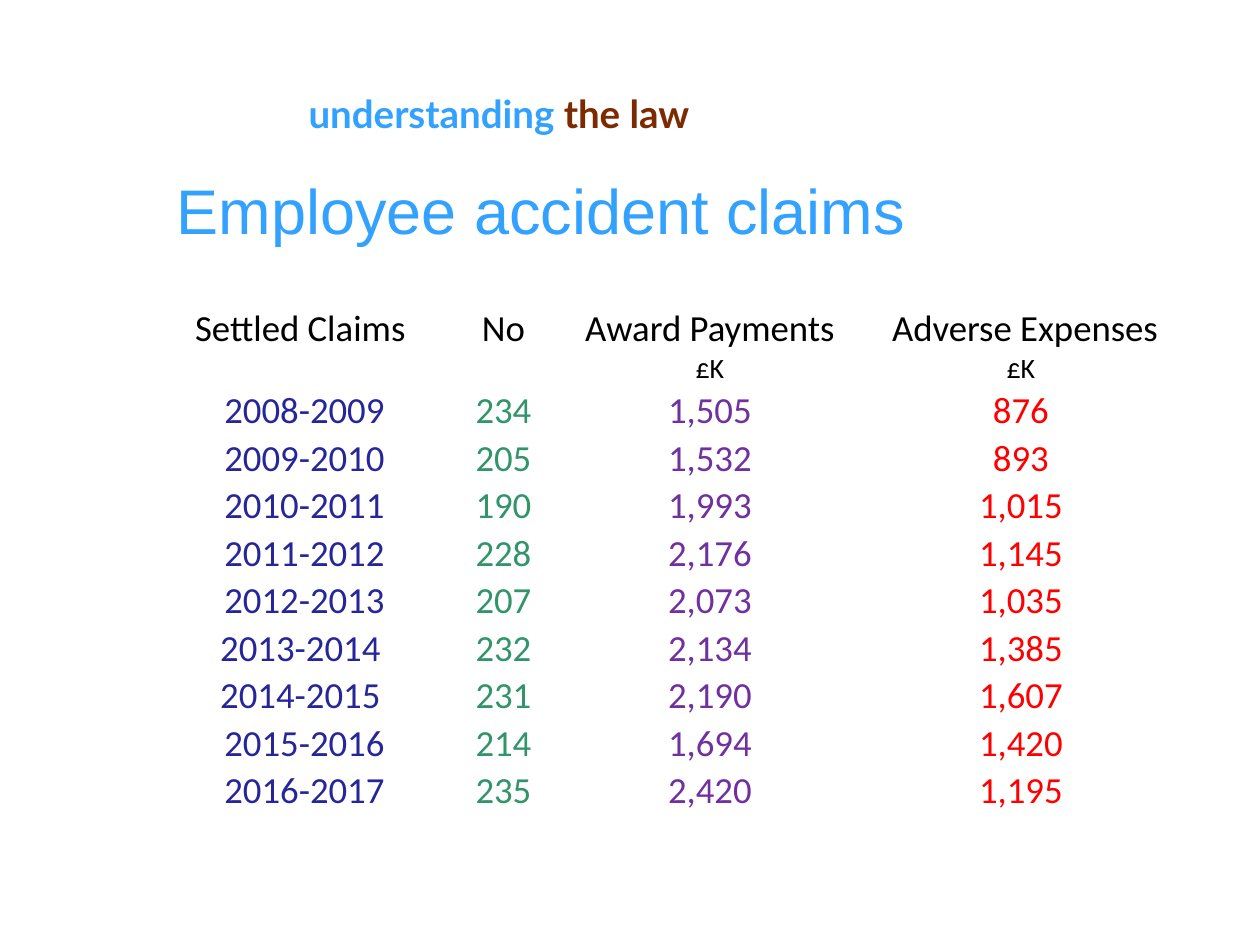
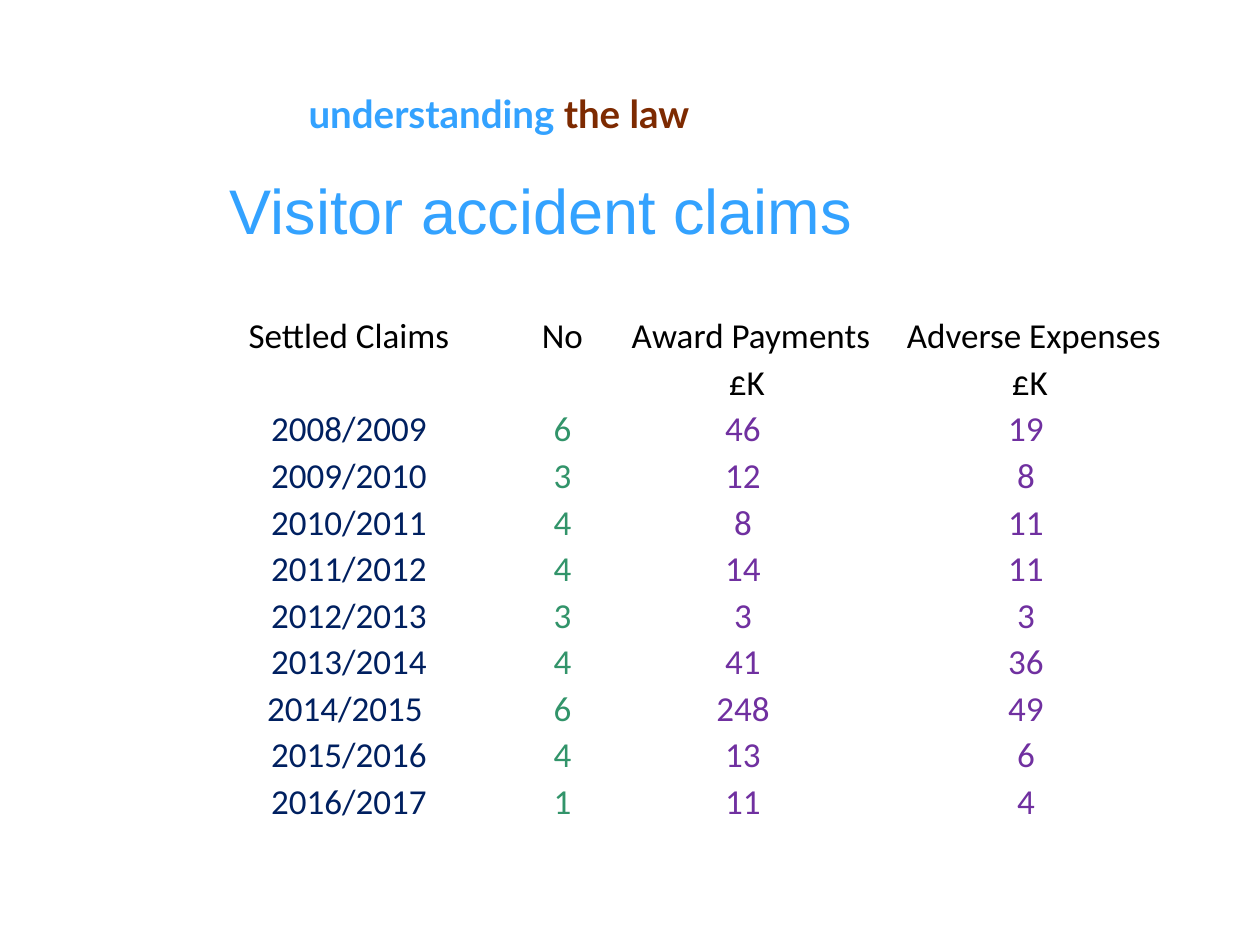
"""Builds two slides of settled accident claims, each with a banner, a title and a table."""
import pptx
import pptx.dml.color
import pptx.enum.text
import pptx.util

RGB = pptx.dml.color.RGBColor
SKY = RGB(0x33, 0xA2, 0xFF)
BROWN = RGB(0x7D, 0x2A, 0x01)
BLACK = RGB(0, 0, 0)
BLUE = RGB(0x26, 0x26, 0x99)
NAVY = RGB(0x00, 0x20, 0x60)
GREEN = RGB(0x32, 0x94, 0x6A)
PLUM = RGB(0x70, 0x30, 0xA0)
RED = RGB(0xFF, 0, 0)

BANNER = (("understanding ", SKY), ("the law", BROWN))

SLIDES = (
    {
        "title": "Employee accident claims",
        "left": 154, "top": 255, "height": 559,
        "cols": (301, 97, 316, 306),
        "heads": (96, 35),
        "size": 21, "unit": 16,
        "inks": (BLUE, GREEN, PLUM, RED),
        "rows": (
            ("Settled Claims ", "No", "Award Payments", " Adverse Expenses"),
            ("", "", "£K", "£K"),
            ("2008-2009", "234", "1,505", "876"),
            ("2009-2010", "205", "1,532", "893"),
            ("2010-2011", "190", "1,993", "1,015"),
            ("2011-2012", "228", "2,176", "1,145"),
            ("2012-2013", "207", "2,073", "1,035"),
            ("2013-2014 ", "232", "2,134", "1,385"),
            ("2014-2015 ", "231", "2,190", "1,607"),
            ("2015-2016", "214", "1,694", "1,420"),
            ("2016-2017", "235", "2,420", "1,195"),
        ),
    },
    {
        "title": "Visitor accident claims",
        "left": 184, "top": 265, "height": 559,
        "cols": (330, 97, 272, 294),
        "heads": (93, 47),
        "size": 20, "unit": 20,
        "inks": (NAVY, GREEN, PLUM, PLUM),
        "rows": (
            ("Settled Claims", "No", " Award Payments", " Adverse Expenses"),
            ("", "", " £K ", "£K"),
            ("2008/2009", "6", "46 ", "19 "),
            ("2009/2010", "3", "12 ", "8 "),
            ("2010/2011", "4", "8 ", "11 "),
            ("2011/2012", "4", "14 ", "11 "),
            ("2012/2013", "3", "3 ", "3 "),
            ("2013/2014", "4", "41 ", "36 "),
            ("2014/2015 ", "6", "248 ", "49 "),
            ("2015/2016", "4", "13 ", "6 "),
            ("2016/2017", "1", "11 ", "4 "),
        ),
    },
)


def px(count):
    return pptx.util.Emu(round(count * 914400 / 126))


def write(para, runs, font, size, bold=False):
    para.alignment = pptx.enum.text.PP_ALIGN.CENTER
    for text, ink in runs:
        run = para.add_run()
        run.text = text
        run.font.name = font
        run.font.size = pptx.util.Pt(size)
        run.font.bold = bold
        run.font.color.rgb = ink


def add_banner(slide):
    box = slide.shapes.add_textbox(px(0), px(84), px(998), px(68))
    box.text_frame.word_wrap = True
    write(box.text_frame.paragraphs[0], BANNER, "Lato", 22, True)


def set_title(slide, text):
    title = slide.shapes.title
    title.left, title.top, title.width, title.height = map(px, (134, 165, 814, 88))
    frame = title.text_frame
    frame.word_wrap = True
    frame.auto_size = pptx.enum.text.MSO_AUTO_SIZE.NONE
    frame.vertical_anchor = pptx.enum.text.MSO_ANCHOR.TOP
    write(frame.paragraphs[0], [(text, SKY)], "Arial", 36)


def fill_cell(cell, text, ink, size):
    cell.fill.background()
    cell.vertical_anchor = pptx.enum.text.MSO_ANCHOR.BOTTOM
    cell.margin_left = cell.margin_right = cell.margin_top = px(1)
    cell.margin_bottom = 0
    para = cell.text_frame.paragraphs[0]
    if text:
        write(para, [(text, ink)], "Calibri", size)
    else:
        para._p.get_or_add_endParaRPr().set("sz", str(size * 100))


def add_claims(slide, data):
    rows, cols, heads = data["rows"], data["cols"], data["heads"]
    table = slide.shapes.add_table(
        len(rows), len(cols), px(data["left"]), px(data["top"]),
        px(sum(cols)), px(data["height"])).table
    table.first_row = table.horz_banding = False
    for col, width in zip(table.columns, cols):
        col.width = px(width)
    years = len(rows) - len(heads)
    step = (data["height"] - sum(heads)) / years
    for row, height in zip(table.rows, heads + (step,) * years):
        row.height = px(height)
    for r, texts in enumerate(rows):
        size = data["unit"] if r == 1 else data["size"]
        for c, text in enumerate(texts):
            ink = BLACK if r < len(heads) else data["inks"][c]
            fill_cell(table.cell(r, c), text, ink, size)


def main():
    deck = pptx.Presentation()
    deck.slide_width, deck.slide_height = px(1260), px(945)
    for data in SLIDES:
        slide = deck.slides.add_slide(deck.slide_layouts[5])
        add_banner(slide)
        set_title(slide, data["title"])
        add_claims(slide, data)
    deck.save("out.pptx")


if __name__ == "__main__":
    main()
